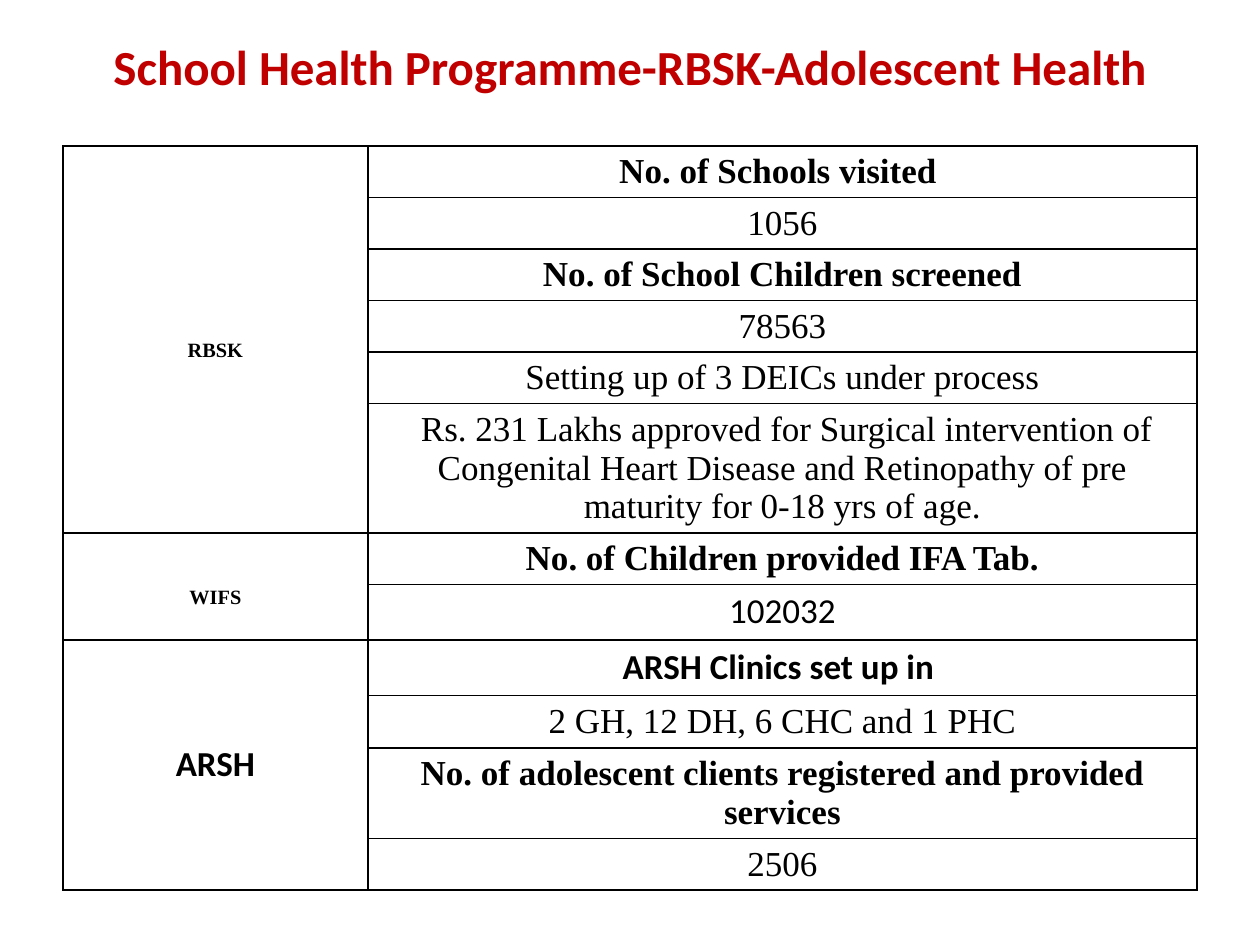
from lxml import etree
from pptx import Presentation
from pptx.dml.color import RGBColor
from pptx.enum.text import MSO_ANCHOR, PP_ALIGN
from pptx.oxml.ns import qn
from pptx.util import Inches, Pt

MIDDLE = MSO_ANCHOR.MIDDLE
CENTER = PP_ALIGN.CENTER
BLACK = RGBColor(0x00, 0x00, 0x00)
WHITE = RGBColor(0xFF, 0xFF, 0xFF)
RED = RGBColor(0xC0, 0x00, 0x00)
SERIF = "Times New Roman"
SANS = "Calibri"
BLANK_LAYOUT = 6

TITLE = "School Health Programme-RBSK-Adolescent Health"
COLUMN_WIDTHS = (2.42, 6.58)

# Programme: name, font, subscript offset, then (text, font, bold, row height)
PROGRAMMES = [
    ("RBSK", SERIF, True, [
        ("No. of Schools visited ", SERIF, True, 0.17),
        ("1056", SERIF, False, 0.34),
        ("No. of School Children screened", SERIF, True, 0.35),
        ("78563", SERIF, False, 0.37),
        ("Setting up of 3 DEICs under process", SERIF, False, 0.37),
        (" Rs. 231 Lakhs approved for Surgical intervention of Congenital Heart "
         "Disease and Retinopathy of pre maturity for 0-18 yrs of age.", SERIF, False, 0.37),
    ]),
    ("WIFS", SERIF, True, [
        ("No. of Children provided IFA Tab.", SERIF, True, 0.3),
        ("102032", SANS, False, 0.32),
    ]),
    ("ARSH", SANS, False, [
        ("ARSH Clinics set up in ", SANS, True, 0.42),
        ("2 GH, 12 DH, 6 CHC and 1 PHC", SERIF, False, 0.42),
        ("No. of adolescent clients registered and provided services", SERIF, True, 0.55),
        ("2506", SERIF, False, 0.38),
    ]),
]


def write_paragraph(paragraph, text, font_name, size, bold, color):
    """Write one centred paragraph in a single style."""
    paragraph.text = text
    paragraph.alignment = CENTER
    font = paragraph.font
    font.name = font_name
    font.size = Pt(size)
    font.bold = bold
    font.color.rgb = color


def style_cell(cell):
    """Give a cell a white fill and thin black borders."""
    properties = cell._tc.get_or_add_tcPr()
    for side in ("a:lnL", "a:lnR", "a:lnT", "a:lnB"):
        line = etree.SubElement(properties, qn(side), w=str(Pt(1)))
        fill = etree.SubElement(line, qn("a:solidFill"))
        etree.SubElement(fill, qn("a:srgbClr"), val=str(BLACK))
    cell.fill.solid()
    cell.fill.fore_color.rgb = WHITE
    cell.vertical_anchor = MIDDLE


def add_title(slide, left, top, width, height):
    """Add the slide title in the given box."""
    shape = slide.shapes.add_textbox(left, top, width, height)
    shape.fill.solid()
    shape.fill.fore_color.rgb = WHITE
    frame = shape.text_frame
    frame.word_wrap = True
    frame.vertical_anchor = MIDDLE
    write_paragraph(frame.paragraphs[0], TITLE, SANS, 28, True, RED)


def add_programme_table(slide, left, top, width, height):
    """Add the table of programmes and their achievements in the given box."""
    row_count = sum(len(entries) for *_, entries in PROGRAMMES)
    shape = slide.shapes.add_table(row_count, 2, left, top, width, height)
    table = shape.table
    for column, column_width in zip(table.columns, COLUMN_WIDTHS):
        column.width = Inches(column_width)
    for cell in table.iter_cells():
        style_cell(cell)

    row = 0
    for name, name_font, subscript, entries in PROGRAMMES:
        name_cell = table.cell(row, 0)
        name_cell.merge(table.cell(row + len(entries) - 1, 0))
        paragraph = name_cell.text_frame.paragraphs[0]
        write_paragraph(paragraph, name, name_font, 20, True, BLACK)
        if subscript:
            paragraph.runs[0].font._element.set("baseline", "-25000")
        for text, font_name, bold, row_height in entries:
            table.rows[row].height = Inches(row_height)
            paragraph = table.cell(row, 1).text_frame.paragraphs[0]
            write_paragraph(paragraph, text, font_name, 20, bold, BLACK)
            row += 1
    shape.height = height


def main():
    """Build the slide and save the presentation."""
    presentation = Presentation()
    presentation.slide_width = Inches(10)
    presentation.slide_height = Inches(7.5)
    slide = presentation.slides.add_slide(presentation.slide_layouts[BLANK_LAYOUT])
    add_programme_table(slide, Inches(0.5), Inches(1.16), Inches(9), Inches(6.2))
    add_title(slide, Inches(0.5), Inches(0.3), Inches(9), Inches(0.45))
    presentation.save("out.pptx")


if __name__ == "__main__":
    main()
